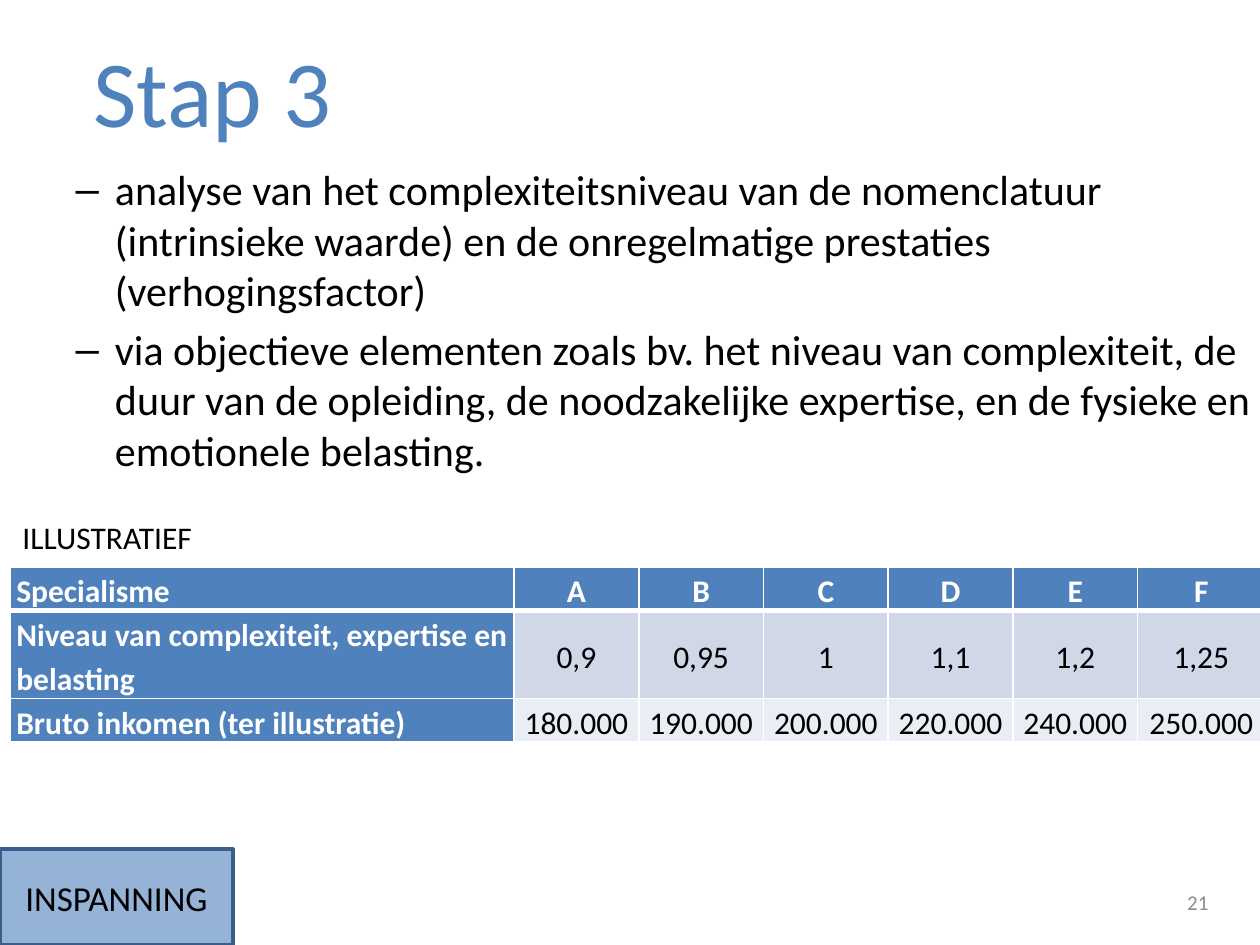
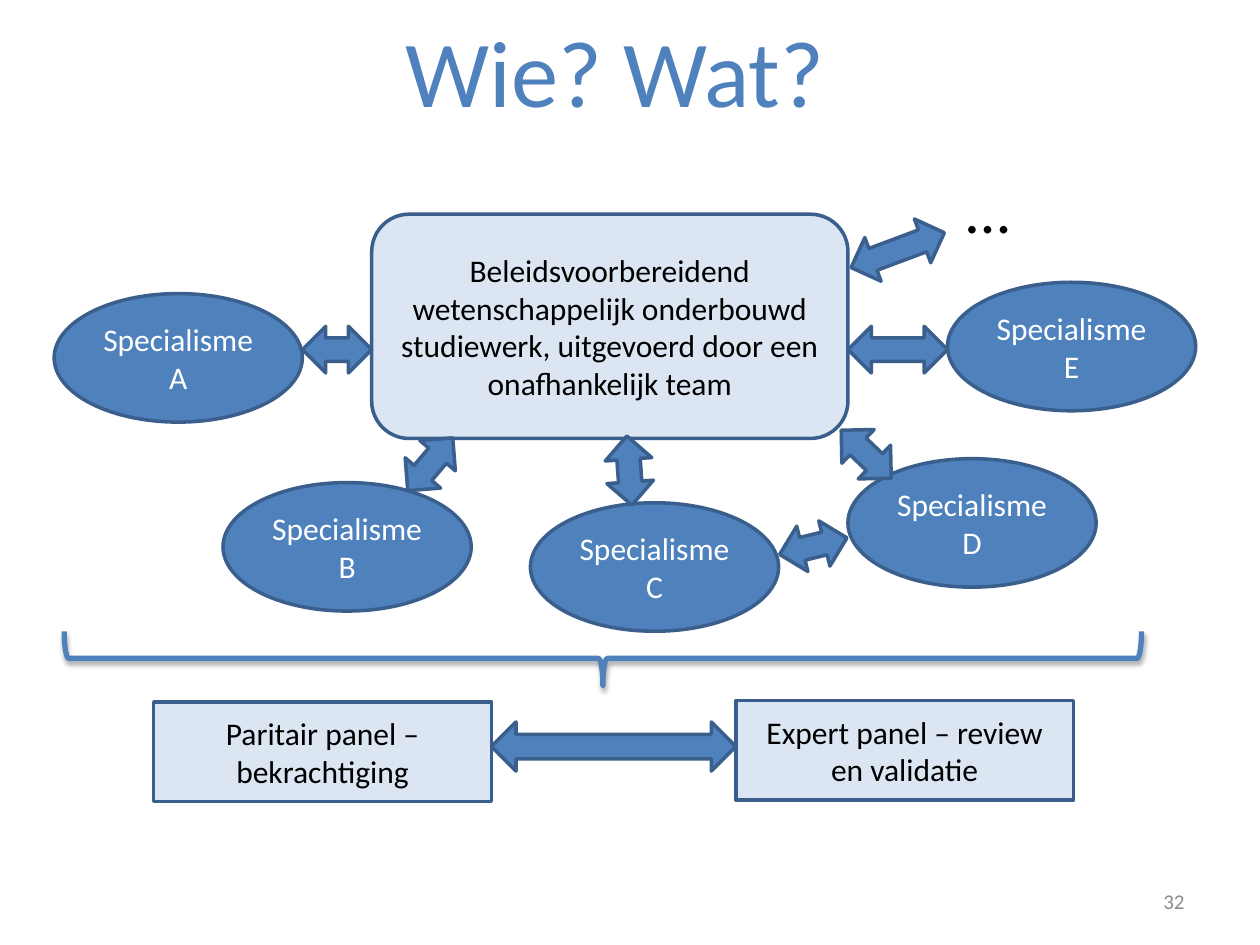
"""Build two slides: the step 3 table and the diagram of who does what."""
from lxml import etree
from pptx import Presentation
from pptx.dml.color import RGBColor
from pptx.enum.shapes import MSO_SHAPE as SHAPE
from pptx.enum.text import MSO_ANCHOR as ANCHOR, MSO_AUTO_SIZE as AUTO, PP_ALIGN as ALIGN
from pptx.oxml import parse_xml
from pptx.oxml.ns import nsdecls, qn
from pptx.util import Inches, Pt

BLUE = RGBColor(0x4F, 0x81, 0xBD)
OUTLINE = RGBColor(0x3A, 0x5F, 0x8C)
MID_BLUE = RGBColor(0x95, 0xB3, 0xD7)
PALE_BLUE = RGBColor(0xDC, 0xE6, 0xF2)
ROW_DARK = RGBColor(0xD0, 0xD8, 0xE8)
ROW_LIGHT = RGBColor(0xE9, 0xED, 0xF4)
GREY = RGBColor(0x8C, 0x8C, 0x8C)
BLACK = RGBColor(0, 0, 0)
WHITE = RGBColor(0xFF, 0xFF, 0xFF)


def write(tf, text, size, color, align=ALIGN.LEFT, **frame):
    """Put one formatted paragraph in a text frame."""
    for name, value in frame.items():
        setattr(tf, name, value)
    p = tf.paragraphs[0]
    p.text, p.alignment = text, align
    for name, value in {"name": "Calibri", "size": Pt(size)}.items():
        setattr(p.font, name, value)
    p.font.color.rgb = color
    return p


def add_box(s, kind, at, fill, text="", size=18, color=BLACK, rotation=0):
    """Add an outlined preset shape with centred text."""
    sp = s.shapes.add_shape(kind, *map(Inches, at))
    sp.shadow.inherit = False
    sp.rotation = rotation
    sp.fill.solid()
    sp.fill.fore_color.rgb = fill
    sp.line.color.rgb, sp.line.width = OUTLINE, Pt(2)
    if text:
        write(sp.text_frame, text, size, color, ALIGN.CENTER,
              word_wrap=True, vertical_anchor=ANCHOR.MIDDLE)
    return sp


prs = Presentation()
prs.slide_width, prs.slide_height = Inches(10), Inches(7.5)

slides = []
for layout, title, title_at, number, number_at in [
    (1, "Stap 3", (0.63, 0.21, 2.11, 1.01), "21", (7.36, 6.96, 2.33, 0.4)),
    (5, "Wie? Wat? ", (3.1, 0.05, 3.73, 1.01), "32", (7.17, 6.95, 2.33, 0.4)),
]:
    s = prs.slides.add_slide(prs.slide_layouts[layout])
    sp = s.shapes.title
    sp.left, sp.top, sp.width, sp.height = map(Inches, title_at)
    write(sp.text_frame, title, 54, BLUE, ALIGN.CENTER, word_wrap=False, auto_size=AUTO.NONE)
    sp = s.shapes.add_textbox(*map(Inches, number_at))
    write(sp.text_frame, number, 12, GREY, ALIGN.RIGHT,
          word_wrap=True, vertical_anchor=ANCHOR.MIDDLE)
    slides.append(s)
step, who = slides

body = step.placeholders[1]
body.left, body.top, body.width, body.height = map(Inches, (0, 1.25, 10.04, 2.74))
tf = body.text_frame
tf.auto_size = AUTO.NONE
points = [
    "analyse van het complexiteitsniveau van de nomenclatuur (intrinsieke waarde) "
    "en de onregelmatige prestaties (verhogingsfactor)",
    "via objectieve elementen zoals bv. het niveau van complexiteit, de duur van de "
    "opleiding, de noodzakelijke expertise, en de fysieke en emotionele belasting.",
]
for i, text in enumerate(points):
    p = tf.add_paragraph() if i else tf.paragraphs[0]
    p.text, p.level = text, 1
    for name, value in {"name": "Calibri", "size": Pt(24)}.items():
        setattr(p.font, name, value)
    p.font.color.rgb = BLACK
tf.paragraphs[0].space_before = Pt(0)

add_box(step, SHAPE.RECTANGLE, (0, 6.74, 1.85, 0.76), MID_BLUE, "INSPANNING", 20)
sp = step.shapes.add_textbox(*map(Inches, (0.08, 4.06, 1.56, 0.4)))
write(sp.text_frame, "ILLUSTRATIEF", 18, BLACK, word_wrap=False)

rows = [
    ["Specialisme", "A", "B", "C", "D", "E", "F"],
    ["Niveau van complexiteit, expertise en belasting",
     "0,9", "0,95", "1", "1,1", "1,2", "1,25"],
    ["Bruto inkomen (ter illustratie)",
     "180.000", "190.000", "200.000", "220.000", "240.000", "250.000"],
]
table = step.shapes.add_table(3, 7, *map(Inches, (0.08, 4.5, 9.96, 1.38))).table
for col, width in zip(table.columns, [4] + [0.99] * 5 + [1.01]):
    col.width = Inches(width)
for row, height in zip(table.rows, [0.34, 0.7, 0.34]):
    row.height = Inches(height)
for r, texts in enumerate(rows):
    for c, text in enumerate(texts):
        cell = table.cell(r, c)
        head = r == 0 or c == 0
        for name, value in {
            "margin_left": Inches(0.05), "margin_right": Inches(0.05),
            "margin_top": 0, "margin_bottom": 0, "vertical_anchor": ANCHOR.MIDDLE,
        }.items():
            setattr(cell, name, value)
        for side in "LRTB":
            thick = (r, side) in [(0, "B"), (1, "T")]
            cell._tc.get_or_add_tcPr().append(parse_xml(
                f'<a:ln{side} {nsdecls("a")} w="{Pt(3 if thick else 1)}"><a:solidFill>'
                f'<a:srgbClr val="{WHITE}"/></a:solidFill></a:ln{side}>'))
        cell.fill.solid()
        cell.fill.fore_color.rgb = BLUE if head else (ROW_DARK if r == 1 else ROW_LIGHT)
        p = write(cell.text_frame, text, 18, WHITE if head else BLACK,
                  ALIGN.CENTER if c else ALIGN.LEFT)
        p.line_spacing, p.font.bold = 1.15, head

add_box(who, SHAPE.ROUNDED_RECTANGLE, (2.95, 1.7, 3.78, 1.78), PALE_BLUE,
        "Beleidsvoorbereidend wetenschappelijk onderbouwd studiewerk, "
        "uitgevoerd door een onafhankelijk team")
for x, y, text in [(1.22, 5.57, "Paritair panel – bekrachtiging"),
                   (5.84, 5.56, "Expert panel – review en validatie")]:
    add_box(who, SHAPE.RECTANGLE, (x, y, 2.68, 0.79), PALE_BLUE, text)
for letter, x, y in [("A", 0.43, 2.33), ("B", 1.77, 3.83), ("C", 4.21, 3.99),
                     ("D", 6.73, 3.64), ("E", 7.52, 2.24)]:
    add_box(who, SHAPE.OVAL, (x, y, 1.97, 1.02), BLUE, f"Specialisme {letter}", color=WHITE)

for x, y, width, height, rotation in [
    (2.4, 2.59, 0.55, 0.37, 0),
    (3.14, 3.5, 0.55, 0.37, 310.5),
    (4.72, 3.55, 0.55, 0.37, 265.8),
    (6.73, 2.59, 0.79, 0.37, 180),
    (6.6, 3.42, 0.55, 0.37, 223.8),
    (3.9, 5.73, 1.94, 0.39, 180),
    (6.73, 1.8, 0.79, 0.37, 159.5),
    (6.18, 4.15, 0.55, 0.37, 346.2),
]:
    add_box(who, SHAPE.LEFT_RIGHT_ARROW, (x, y, width, height), BLUE, rotation=rotation)

brace = add_box(who, SHAPE.LEFT_BRACE, (4.57, 0.95, 0.43, 8.55), BLUE, rotation=270)
brace.fill.background()
brace.line.color.rgb, brace.line.width = BLUE, Pt(3)
effects = brace._element.spPr.find(qn("a:effectLst"))
shadow = etree.SubElement(effects, qn("a:outerShdw"), blurRad=str(Pt(3.1)), dist=str(Pt(1.8)),
                          dir="5400000", rotWithShape="0")
color = etree.SubElement(shadow, qn("a:srgbClr"), val=str(BLACK))
etree.SubElement(color, qn("a:alpha"), val="35000")

sp = who.shapes.add_textbox(*map(Inches, (7.57, 1.3, 0.55, 0.71)))
write(sp.text_frame, "…", 36, BLACK, word_wrap=False)

prs.save("out.pptx")
